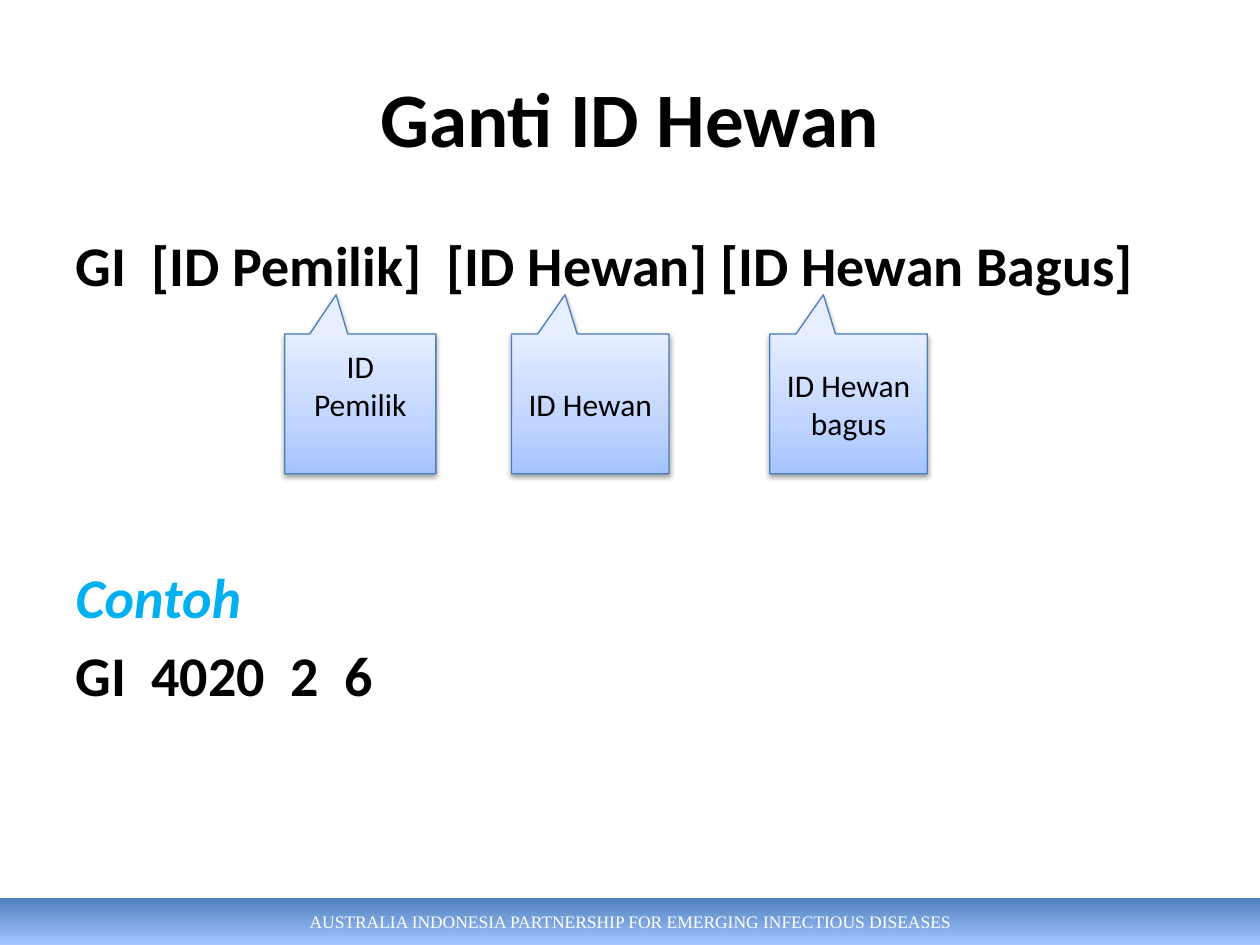
from lxml.etree import SubElement as Sub
from pptx import Presentation
from pptx.dml.color import RGBColor as RGB
from pptx.enum.shapes import MSO_SHAPE as Kind
from pptx.enum.text import MSO_ANCHOR as Anchor, MSO_AUTO_SIZE as Fit, PP_ALIGN as Align
from pptx.oxml.ns import qn
from pptx.util import Inches, Pt

HUES = {"ink": "000000", "white": "FFFFFF", "sky": "00B0F0", "edge": "4B7EBC",
        "deep": "4F81BD", "blue": "A4C4FF", "mid": "BFD4FF", "pale": "E6EEFF"}

deck = Presentation()
deck.slide_width, deck.slide_height = Inches(10), Inches(7.5)
wide, high = deck.slide_width, deck.slide_height
slide = deck.slides.add_slide(deck.slide_layouts[1])


def style(par, size, hue, face="Calibri", bold=None, slant=None, align=None):
    par.alignment = align
    font = par.font
    font.name, font.size, font.bold, font.italic = face, Pt(size), bold, slant
    font.color.rgb = RGB.from_string(HUES[hue])


def shade(shape, stops, angle, alpha, dist):
    """Fill with a gradient and cast a soft shadow straight down."""
    shape.fill.gradient()
    shape.fill.gradient_angle = angle
    props = shape._element.spPr
    ramp = props.find(".//" + qn("a:gsLst"))
    for old in list(ramp):
        ramp.remove(old)
    for share, hue in stops:
        stop = Sub(ramp, qn("a:gs"), pos=str(share * 1000))
        Sub(stop, qn("a:srgbClr"), val=HUES[hue])
    shape.shadow.inherit = False
    cast = Sub(props.find(qn("a:effectLst")), qn("a:outerShdw"), blurRad=str(Pt(3.1)),
               dist=str(Pt(dist)), dir="5400000", rotWithShape="0")
    tone = Sub(cast, qn("a:srgbClr"), val=HUES["ink"])
    Sub(tone, qn("a:alpha"), val=str(alpha * 1000))


# Title
title = slide.shapes.title
title.left, title.top = int(wide * 0.05), int(high * 0.04)
title.width, title.height = int(wide * 0.9), Inches(1.25)
frame = title.text_frame
frame.text = "Ganti ID Hewan"
frame.vertical_anchor = Anchor.MIDDLE
style(frame.paragraphs[0], 44, "ink", bold=True, align=Align.CENTER)

# Command pattern and example
body = slide.placeholders[1]
body.left, body.top = int(wide * 0.05), Inches(1.78)
body.width, body.height = int(wide * 0.9), int(high * 0.66)
frame = body.text_frame
frame.auto_size = Fit.NONE
lines = [("GI  [ID Pemilik]  [ID Hewan] [ID Hewan Bagus]", 0, "ink", False),
         ("Contoh", 151, "sky", True),
         ("GI  4020  2  6", 6.4, "ink", False)]
frame.text = "\n".join(line[0] for line in lines)
for par, (_, gap, hue, slant) in zip(frame.paragraphs, lines):
    props = par._p.get_or_add_pPr()
    props.set("marL", "0")
    props.set("indent", "0")
    Sub(props, qn("a:buNone"))
    par.space_before = Pt(gap)
    style(par, 32, hue, bold=True, slant=slant)

# Footer band
band = slide.shapes.add_shape(Kind.RECTANGLE, 0, int(high * 0.95), wide, int(high * 0.05))
shade(band, [(0, "deep"), (100, "blue")], 270, 35, 1.8)
band.line.fill.background()
frame = band.text_frame
frame.text = "AUSTRALIA INDONESIA PARTNERSHIP FOR EMERGING INFECTIOUS DISEASES"
frame.vertical_anchor = Anchor.MIDDLE
style(frame.paragraphs[0], 10, "white", face="Times New Roman", align=Align.CENTER)

# Callouts under each part of the pattern: text, left, width, bottom inset
foot = Inches(3.76)
for text, left, span, inset in [("ID Pemilik", 2.26, 1.2, 0.35),
                                ("ID Hewan", 4.06, 1.25, 0.05),
                                ("ID Hewan bagus", 6.11, 1.25, 0.05)]:
    tall = Inches(1.11)
    note = slide.shapes.add_shape(Kind.RECTANGULAR_CALLOUT, Inches(left), foot - tall,
                                  Inches(span), tall)
    note.adjustments[0], note.adjustments[1] = -0.16, -0.78
    shade(note, [(0, "blue"), (35, "mid"), (100, "pale")], 90, 38, 1.6)
    note.line.color.rgb = RGB.from_string(HUES["edge"])
    note.line.width = Pt(0.75)
    frame = note.text_frame
    frame.text = text
    frame.word_wrap = True
    frame.vertical_anchor = Anchor.MIDDLE
    frame.margin_bottom = Inches(inset)
    style(frame.paragraphs[0], 18, "ink", align=Align.CENTER)

deck.save("out.pptx")
